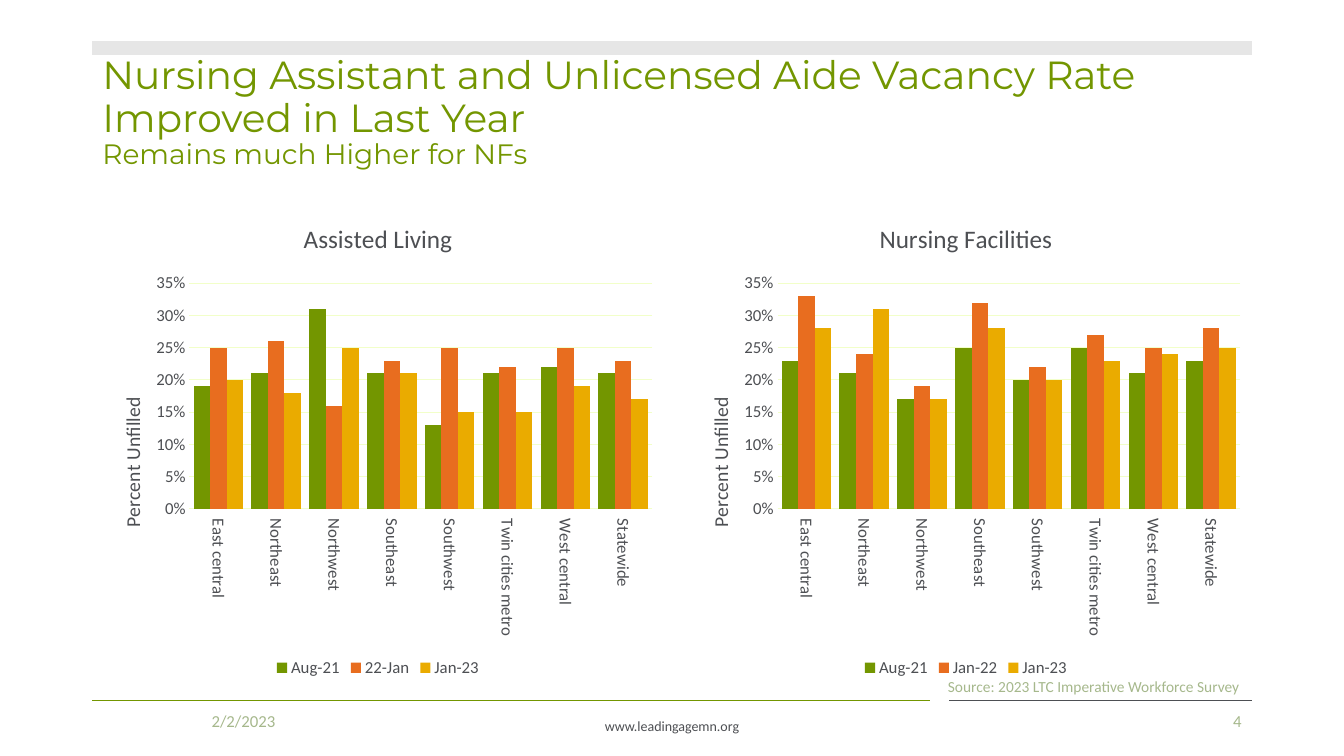
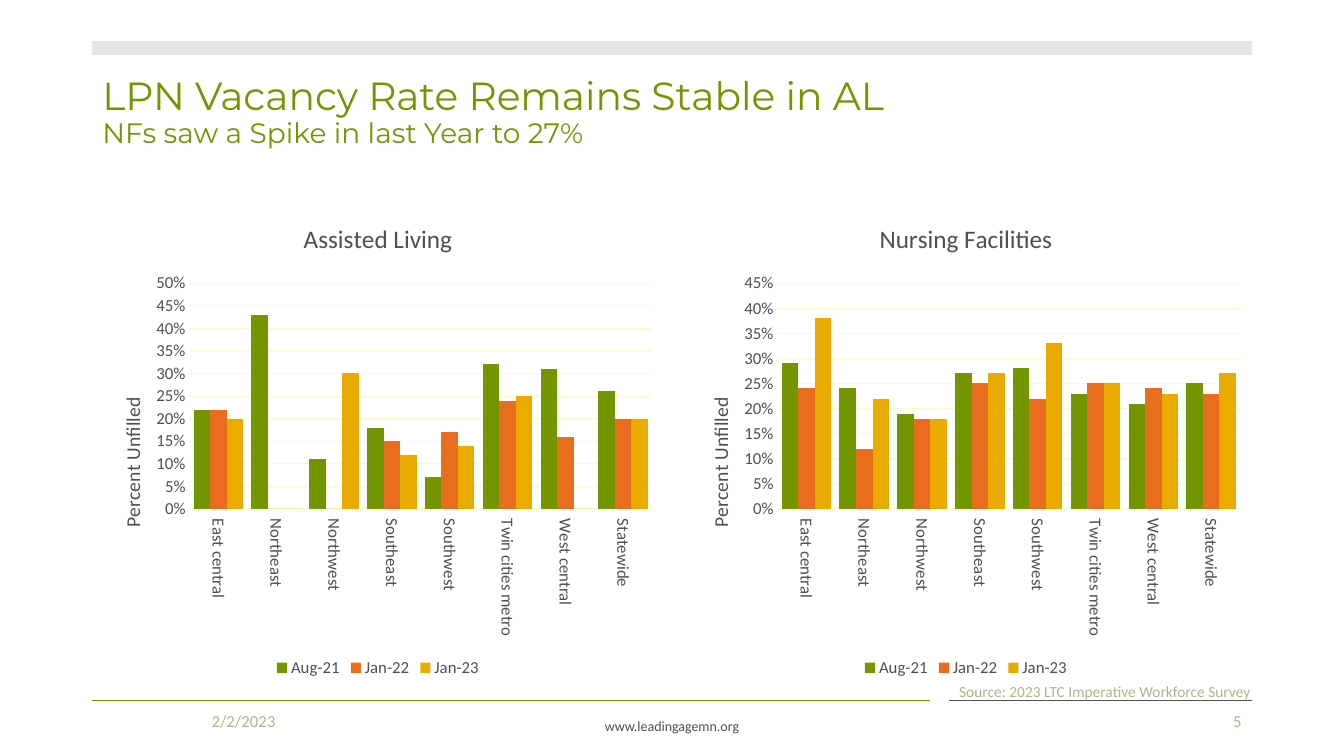
from lxml import etree
from pptx import Presentation
from pptx.chart.data import CategoryChartData as ChartData
from pptx.dml.color import RGBColor as RGB
from pptx.enum.chart import XL_CHART_TYPE as CT, XL_LEGEND_POSITION as LP
from pptx.enum.chart import XL_TICK_LABEL_POSITION as TLP, XL_TICK_MARK as TM
from pptx.enum.shapes import MSO_CONNECTOR as CONN
from pptx.enum.text import MSO_ANCHOR as VA, PP_ALIGN as AL
from pptx.oxml.ns import qn
from pptx.util import Pt

COLORS = {"green": "739600", "orange": "E86D1F", "gold": "EAAB00", "gray": "4D4F53",
          "band": "E6E6E6", "sage": "A6B88C", "grid": "F2FFC9"}
LEFT, RIGHT, FOOT = 66, 894, 500.5
CHART_W, CHART_H, CHART_Y = 408, 343, 144
REGIONS = ["East central", "Northeast", "Northwest", "Southeast", "Southwest",
           "Twin cities metro", "West central", "Statewide"]
SOURCE = "Source: 2023 LTC Imperative Workforce Survey"


class Deck:
    """Holds the shared style and the current slide."""

    def __init__(self):
        self.prs = Presentation()
        self.prs.slide_width, self.prs.slide_height = Pt(960), Pt(540)
        self.s = None

    def font(self, font, size, color, name="Calibri"):
        font.size, font.name, font.bold = Pt(size), name, False
        font.color.rgb = RGB.from_string(COLORS[color])

    def line(self, x1, x2, y, color, width=1):
        ln = self.s.shapes.add_connector(CONN.STRAIGHT, Pt(x1), Pt(y), Pt(x2), Pt(y))
        ln.line.color.rgb = RGB.from_string(COLORS[color])
        ln.line.width = Pt(width)
        etree.SubElement(ln._element.spPr, qn("a:effectLst"))

    def text(self, box, runs, color, name="Calibri", align=AL.LEFT, anchor=VA.MIDDLE, spacing=1.0):
        tf = self.s.shapes.add_textbox(*map(Pt, box)).text_frame
        tf.word_wrap, tf.vertical_anchor = True, anchor
        p = tf.paragraphs[0]
        p.alignment, p.line_spacing = align, spacing
        for i, (words, size) in enumerate(runs):
            if i:
                p.add_line_break()
            r = p.add_run()
            r.text = words
            self.font(r.font, size, color, name)

    def slide(self, number, title, subtitle, source_at):
        self.s = self.prs.slides.add_slide(self.prs.slide_layouts[6])
        self.line(LEFT, 664, FOOT, "green")
        self.line(678, RIGHT, FOOT, "gray")
        self.line(LEFT, RIGHT, 34, "band", 10)
        self.text((318, 509, 324, 20), [("www.leadingagemn.org", 10)], "gray",
                  align=AL.CENTER, anchor=VA.TOP)
        self.text((LEFT, 29, RIGHT - LEFT, 104), [(title, 28), (subtitle, 20)], "green",
                  "Montserrat", spacing=0.9)
        self.text((*source_at, 259, 29), [(SOURCE, 11)], "sage")
        self.text((LEFT, FOOT, 216, 29), [("2/2/2023", 12)], "sage", align=AL.CENTER)
        self.text((678, FOOT, 216, 29), [(str(number), 12)], "sage", align=AL.RIGHT)

    def place(self, parent, index, **values):
        for old in parent.findall(qn("c:layout")):
            parent.remove(old)
        layout = etree.Element(qn("c:layout"))
        manual = etree.SubElement(layout, qn("c:manualLayout"))
        for tag, val in values.items():
            etree.SubElement(manual, qn("c:" + tag)).set("val", str(val))
        parent.insert(index, layout)

    def heading(self, owner, words, size):
        tf = owner.text_frame
        r = tf.paragraphs[0].add_run()
        r.text = words
        self.font(r.font, size, "gray")
        return tf

    def chart(self, x, title, top, series):
        data = ChartData(number_format="0%")
        data.categories = REGIONS
        for name, vals in series:
            data.add_series(name, vals)
        ch = self.s.shapes.add_chart(CT.COLUMN_CLUSTERED, Pt(x), Pt(CHART_Y), Pt(CHART_W),
                                     Pt(CHART_H), data).chart
        self.font(ch.font, 10, "gray")
        ch.has_title = True
        self.heading(ch.chart_title, title, 18)
        ch.chart_title.include_in_layout = False
        ch.has_legend = True
        ch.legend.position, ch.legend.include_in_layout = LP.BOTTOM, False
        self.font(ch.legend.font, 12, "gray")
        plot = ch.plots[0]
        plot.gap_width, plot.overlap, plot.vary_by_categories = 50, 0, False
        for ser, color in zip(plot.series, ("green", "orange", "gold")):
            ser.format.fill.solid()
            ser.format.fill.fore_color.rgb = RGB.from_string(COLORS[color])
        self.axes(ch.category_axis, ch.value_axis, top)
        self.place(ch._chartSpace.chart.plotArea, 0, layoutTarget="inner", xMode="edge",
                   yMode="edge", x=0.17, y=0.17, w=0.81, h=0.47)

    def axes(self, cat, val, top):
        for ax in (cat, val):
            ax.major_tick_mark = ax.minor_tick_mark = TM.NONE
            self.font(ax.tick_labels.font, 12, "gray")
        cat.tick_label_position = TLP.LOW
        cat._element.txPr.bodyPr.set("rot", "5400000")
        val.minimum_scale, val.maximum_scale, val.major_unit = 0, top, 0.05
        val.tick_labels.number_format = "0%"
        val.tick_labels.number_format_is_linked = False
        val.format.line.fill.background()
        for ln in (cat.format.line, val.major_gridlines.format.line):
            ln.color.rgb = RGB.from_string(COLORS["grid"])
            ln.width = Pt(0.75)
        tf = self.heading(val.axis_title, "Percent Unfilled", 14)
        tf._txBody.bodyPr.set("rot", "-5400000")
        self.place(val.axis_title._element, 1, xMode="edge", yMode="edge", x=0.04, y=0.4)


SLIDES = [
    (4, "Nursing Assistant and Unlicensed Aide Vacancy Rate Improved in Last Year",
     "Remains much Higher for NFs", (670, 476), [
         ("Assisted Living", 0.35, [
             ("Aug-21", (0.19, 0.21, 0.31, 0.21, 0.13, 0.21, 0.22, 0.21)),
             ("22-Jan", (0.25, 0.26, 0.16, 0.23, 0.25, 0.22, 0.25, 0.23)),
             ("Jan-23", (0.2, 0.18, 0.25, 0.21, 0.15, 0.15, 0.19, 0.17))]),
         ("Nursing Facilities", 0.35, [
             ("Aug-21", (0.23, 0.21, 0.17, 0.25, 0.2, 0.25, 0.21, 0.23)),
             ("Jan-22", (0.33, 0.24, 0.19, 0.32, 0.22, 0.27, 0.25, 0.28)),
             ("Jan-23", (0.28, 0.31, 0.17, 0.28, 0.2, 0.23, 0.24, 0.25))])]),
    (5, "LPN Vacancy Rate Remains Stable in AL",
     "NFs saw a Spike in last Year to 27%", (678, 479), [
         ("Assisted Living", 0.5, [
             ("Aug-21", (0.22, 0.43, 0.11, 0.18, 0.07, 0.32, 0.31, 0.26)),
             ("Jan-22", (0.22, 0, 0, 0.15, 0.17, 0.24, 0.16, 0.2)),
             ("Jan-23", (0.2, 0, 0.3, 0.12, 0.14, 0.25, 0, 0.2))]),
         ("Nursing Facilities", 0.45, [
             ("Aug-21", (0.29, 0.24, 0.19, 0.27, 0.28, 0.23, 0.21, 0.25)),
             ("Jan-22", (0.24, 0.12, 0.18, 0.25, 0.22, 0.25, 0.24, 0.23)),
             ("Jan-23", (0.38, 0.22, 0.18, 0.27, 0.33, 0.25, 0.23, 0.27))])]),
]


def main():
    deck = Deck()
    for number, title, subtitle, source_at, charts in SLIDES:
        deck.slide(number, title, subtitle, source_at)
        for x, chart in zip((LEFT, RIGHT - CHART_W), charts):
            deck.chart(x, *chart)
    deck.prs.save("out.pptx")


if __name__ == "__main__":
    main()
